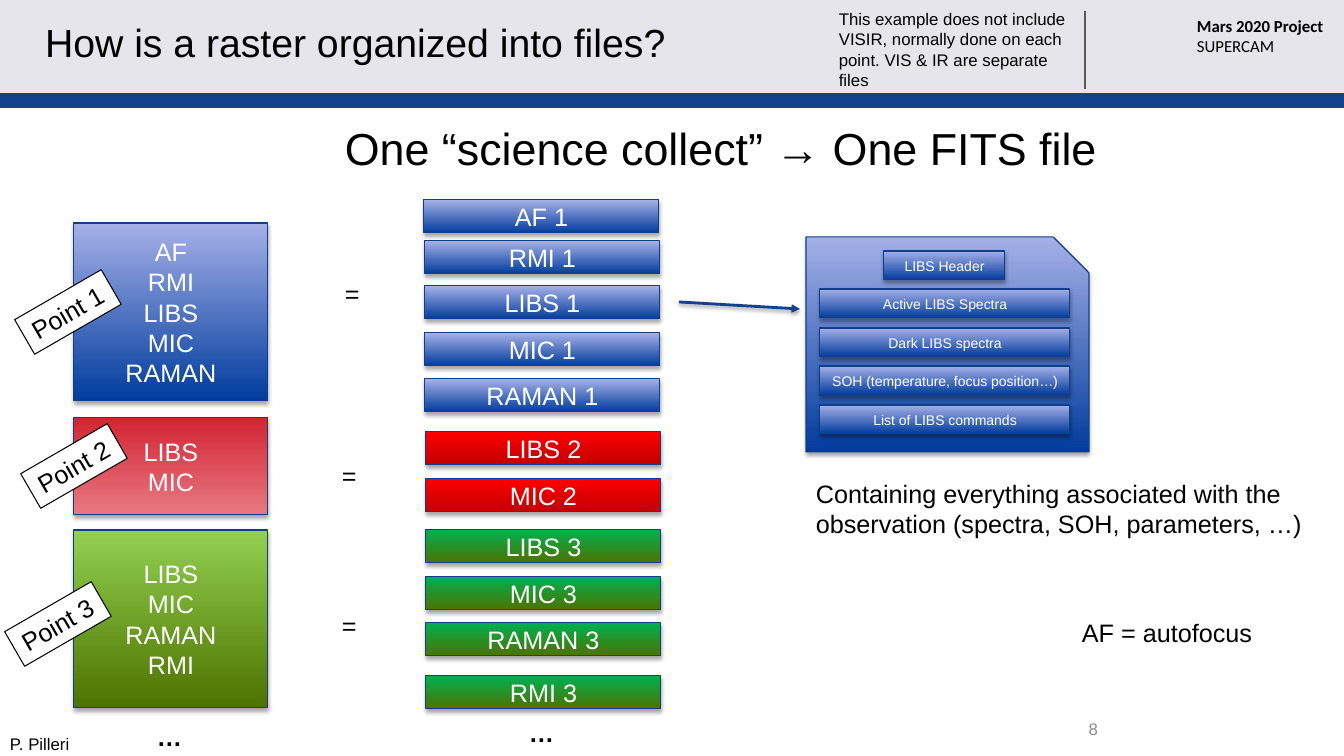
from lxml import etree
from pptx import Presentation
from pptx.dml.color import RGBColor
from pptx.enum.shapes import MSO_CONNECTOR, MSO_SHAPE
from pptx.enum.text import MSO_ANCHOR, MSO_AUTO_SIZE, PP_ALIGN
from pptx.oxml.ns import qn
from pptx.util import Pt

RECT, SNIP = MSO_SHAPE.RECTANGLE, MSO_SHAPE.SNIP_1_RECTANGLE
STRAIGHT = MSO_CONNECTOR.STRAIGHT
TOP, MIDDLE = MSO_ANCHOR.TOP, MSO_ANCHOR.MIDDLE
FIXED, GROW = MSO_AUTO_SIZE.NONE, MSO_AUTO_SIZE.SHAPE_TO_FIT_TEXT
LEFT, CENTER, RIGHT = PP_ALIGN.LEFT, PP_ALIGN.CENTER, PP_ALIGN.RIGHT

BLACK = RGBColor(0x00, 0x00, 0x00)
WHITE = RGBColor(0xFF, 0xFF, 0xFF)
GRAY = RGBColor(0x8C, 0x8C, 0x8C)
SLATE = RGBColor(0x59, 0x59, 0x59)
PALE = RGBColor(0xE6, 0xE5, 0xEC)
NAVY = RGBColor(0x13, 0x41, 0x8B)
EDGE = RGBColor(0x10, 0x3E, 0x8B)
BLUES = RGBColor(0x01, 0x3C, 0x9D), RGBColor(0xA5, 0xB0, 0xE7)
PINKS = RGBColor(0xE7, 0x79, 0x82), RGBColor(0xD2, 0x25, 0x33)
REDS = RGBColor(0xC0, 0x00, 0x00), RGBColor(0xFF, 0x00, 0x00)
LIMES = RGBColor(0x4D, 0x73, 0x00), RGBColor(0x92, 0xD0, 0x50)
GREENS = RGBColor(0x4D, 0x73, 0x00), RGBColor(0x00, 0xB0, 0x50)
PLAIN = "{2D5ABB26-0587-4C30-8999-92F81FD0307C}"


def px(*sizes):
    return [round(size * 914400 / 100.8) for size in sizes]


def write(frame, text, size=18, color=BLACK, bold=False, font="Arial",
          align=LEFT, anchor=TOP, wrap=False, fit=GROW):
    frame.text = text
    frame.word_wrap = wrap
    frame.auto_size = fit
    frame.vertical_anchor = anchor
    for para in frame.paragraphs:
        para.alignment = align
        for run in para.runs:
            run.font.name = font
            run.font.size = Pt(size)
            run.font.bold = bold
            run.font.color.rgb = color


def shade(effects, alpha, blur, dist):
    cast = etree.SubElement(effects, qn("a:outerShdw"), blurRad=str(Pt(blur)),
                            dist=str(Pt(dist)), dir="5400000", rotWithShape="0")
    tint = etree.SubElement(cast, qn("a:srgbClr"), val="000000")
    etree.SubElement(tint, qn("a:alpha"), val=str(alpha * 1000))


class Page:
    def __init__(self, deck):
        self.slide = deck.slides.add_slide(deck.slide_layouts[5])
        self.shapes = self.slide.shapes

    def title(self, text, *place):
        head = self.shapes.title
        head.left, head.top, head.width, head.height = px(*place)
        write(head.text_frame, text, size=28, anchor=MIDDLE, wrap=True, fit=FIXED)
        head.element.getparent().append(head.element)

    def text(self, text, *place, **style):
        box = self.shapes.add_textbox(*px(*place))
        write(box.text_frame, text, **style)
        return box

    def panel(self, *place, fill=WHITE, edge=None, turn=0):
        shape = self.shapes.add_shape(RECT, *px(*place))
        shape.shadow.inherit = False
        shape.fill.solid()
        shape.fill.fore_color.rgb = fill
        shape.rotation = turn
        if edge is None:
            shape.line.fill.background()
        else:
            shape.line.color.rgb = edge
            shape.line.width = Pt(0.75)
        return shape

    def block(self, text, *place, hues=BLUES, size=18, kind=RECT, home=None):
        shape = (home or self.slide).shapes.add_shape(kind, *px(*place))
        shape.fill.gradient()
        shape.fill.gradient_angle = 90
        for stop, hue in zip(shape.fill.gradient_stops, hues):
            stop.color.rgb = hue
        shape.line.color.rgb = EDGE
        shape.line.width = Pt(0.75)
        shape.shadow.inherit = False
        shade(shape.element.spPr.find(qn("a:effectLst")), 35, 3.1, 1.8)
        if text:
            write(shape.text_frame, text, size=size, color=WHITE, align=CENTER,
                  anchor=MIDDLE, wrap=True, fit=FIXED)

    def line(self, *ends, color, width, arrow=False):
        line = self.shapes.add_connector(STRAIGHT, *px(*ends))
        line.line.color.rgb = color
        line.line.width = Pt(width)
        if arrow:
            etree.SubElement(line.line._get_or_add_ln(), qn("a:tailEnd"), type="triangle")
        effects = etree.SubElement(line._element.spPr, qn("a:effectLst"))
        if arrow:
            shade(effects, 38, 3.1, 1.6)

    def band(self, *place):
        table = self.shapes.add_table(1, 2, *px(*place)).table
        table._tbl.tblPr.find(qn("a:tableStyleId")).text = PLAIN
        for cell in table.iter_cells():
            cell.fill.solid()
            cell.fill.fore_color.rgb = NAVY
            cell.margin_top = cell.margin_bottom = 0
            para = cell.text_frame.paragraphs[0]
            etree.SubElement(para._p, qn("a:endParaRPr"), sz="400")


def main():
    deck = Presentation()
    deck.slide_width, deck.slide_height = px(1344, 756)
    page = Page(deck)

    page.panel(0, 0, 1344, 94, fill=PALE)
    page.band(0, 93, 1344, 15)
    page.line(1085, 11, 1085, 89, color=SLATE, width=1)
    team = page.text("Mars 2020 Project\nSUPERCAM", 1187, 11, 157, 50,
                     size=12, font="Calibri", wrap=True)
    team.text_frame.paragraphs[0].runs[0].font.bold = True
    page.title("How is a raster organized into files?", 35, 11, 1036, 61)
    page.text("This example does not include VISIR, normally done on each point. "
              "VIS & IR are separate files", 829, 4, 249, 92, size=12, wrap=True)
    page.text("8", 795, 709, 313, 40, size=12, color=GRAY, align=RIGHT,
              anchor=MIDDLE, wrap=True, fit=FIXED)
    page.text("One “science collect” → One FITS file", 335, 116, 778, 65, size=32)

    points = [
        ("AF RMI LIBS MIC RAMAN", 223, 178, BLUES, (18, 292), (335, 273)),
        ("LIBS MIC", 418, 97, PINKS, (24, 446), (332, 455)),
        ("LIBS MIC RAMAN RMI", 530, 178, LIMES, (8, 604), (332, 605)),
    ]
    bars = [
        (BLUES, [(424, 200), (425, 241), (425, 286), (425, 333), (425, 379)]),
        (REDS, [(426, 432), (426, 479)]),
        (GREENS, [(426, 530), (426, 577), (426, 623), (426, 676)]),
    ]
    rows = zip(points, bars)
    for count, ((kinds, top, high, hues, tag, equal), (tones, spots)) in enumerate(rows, 1):
        names = kinds.split()
        page.block("\n".join(names), 74, top, 194, high, hues=hues)
        label = page.panel(*tag, 100, 40, edge=BLACK, turn=330)
        write(label.text_frame, f"Point {count}")
        page.text("=", *equal, 35, 40)
        for name, spot in zip(names, spots):
            page.block(f"{name} {count}", *spot, 235, 33, hues=tones)

    group = page.shapes.add_group_shape()
    page.block("", 806, 237, 283, 215, kind=SNIP, home=group)
    parts = ["LIBS Header", "Active LIBS Spectra", "Dark LIBS spectra",
             "SOH (temperature, focus position…)", "List of LIBS commands"]
    for step, part in enumerate(parts):
        left, wide = (820, 250) if step else (884, 121)
        page.block(part, left, 251 + 193 * step // 5, wide, 29, size=10, home=group)
    page.line(679, 302, 800, 309, color=NAVY, width=2, arrow=True)

    page.text("Containing everything associated with the\v"
              "observation (spectra, SOH, parameters, …)", 806, 473, 511, 72)
    page.text("AF = autofocus", 1072, 612, 193, 40)
    for spot in [(147, 716), (519, 712)]:
        page.text("…", *spot, 45, 40, bold=True)
    page.text("P. Pilleri", 0, 729, 81, 30, size=12)
    deck.save("out.pptx")


if __name__ == "__main__":
    main()
